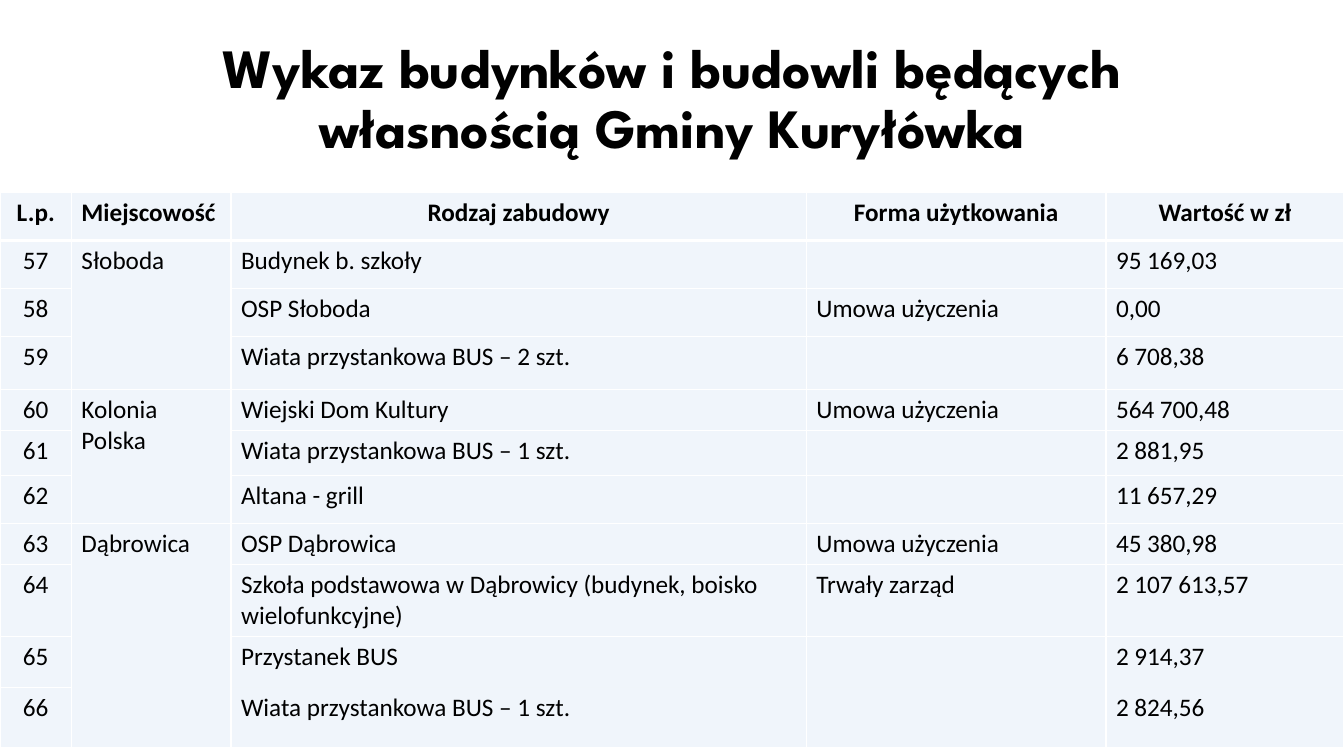
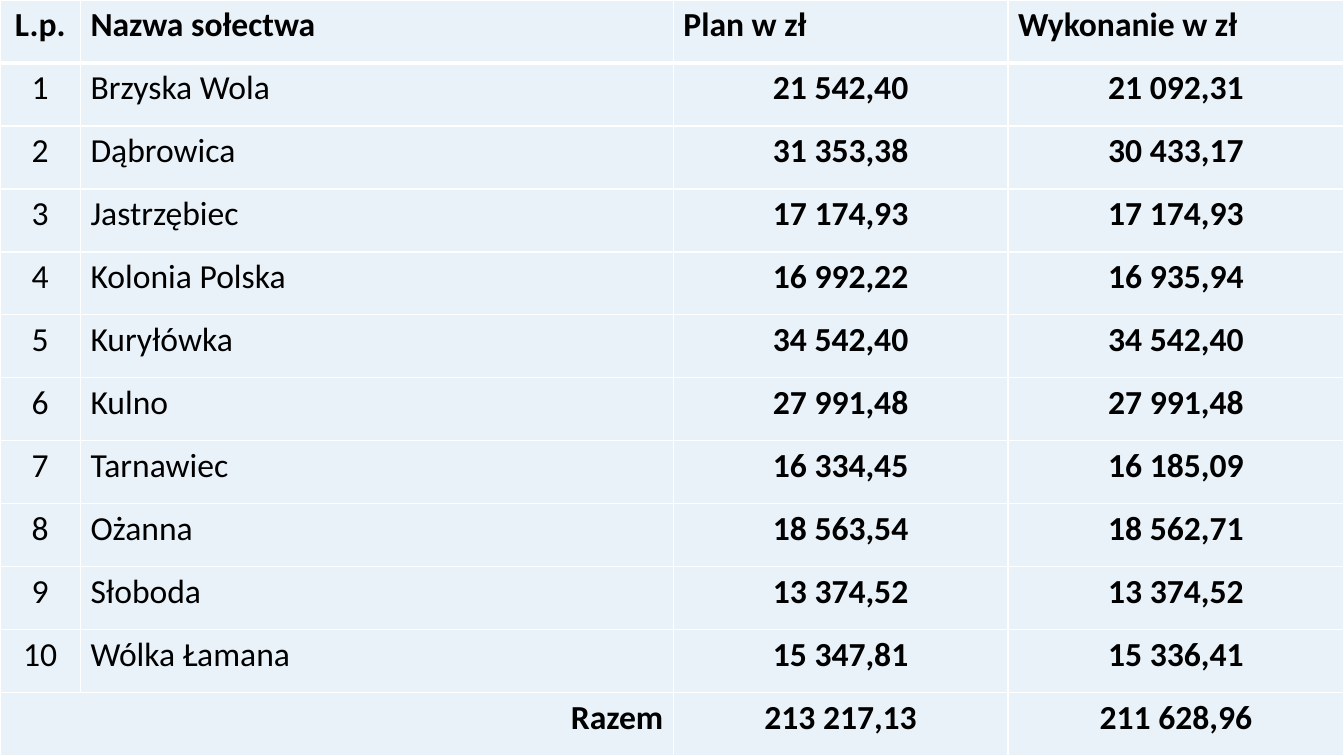
from lxml import etree
from pptx import Presentation
from pptx.dml.color import RGBColor
from pptx.enum import text as t
from pptx.oxml.ns import qn
from pptx.util import Pt

HUE = {"ink": "000000", "tint": "5B9BD5", "rule": "FFFFFF"}
FACE = {"head": "League Spartan", "body": "Calibri"}
SIDE = {"l": t.PP_ALIGN.LEFT, "c": t.PP_ALIGN.CENTER, "r": t.PP_ALIGN.RIGHT}
WIDE, HIGH = 960, 540

TITLE = "Wykaz budynków i budowli będących własnością Gminy Kuryłówka"
LOAN = "Umowa użyczenia"
ASSETS = {
    "top": 137.5,
    "cols": [51, 114, 411, 214, 170],
    "tall": [34.3, 34.3, 34.3, 37.9, 29.3, 32.1, 34.3, 29.3, 51.4, 36.6, 43],
    "size": 18, "alpha": 9,
    "head": "clccc", "body": "cllll", "bold": (),
    "merge": [(1, 1, 3, 1), (4, 1, 6, 1), (7, 1, 10, 1)],
    "open": [(9, 2), (9, 3), (9, 4)],
    "rows": [
        ("L.p.", "Miejscowość", "Rodzaj zabudowy", "Forma użytkowania", "Wartość w zł"),
        ("57", "Słoboda", "Budynek b. szkoły", "", "95 169,03"),
        ("58", "", "OSP Słoboda", LOAN, "0,00"),
        ("59", "", "Wiata przystankowa BUS – 2 szt.", "", "6 708,38"),
        ("60", "Kolonia Polska", "Wiejski Dom Kultury", LOAN, "564 700,48"),
        ("61", "", "Wiata przystankowa BUS – 1 szt.", "", "2 881,95"),
        ("62", "", "Altana - grill", "", "11 657,29"),
        ("63", "Dąbrowica", "OSP Dąbrowica", LOAN, "45 380,98"),
        ("64", "", "Szkoła podstawowa w Dąbrowicy (budynek, boisko wielofunkcyjne)",
         "Trwały zarząd", "2 107 613,57"),
        ("65", "", "Przystanek BUS", "", "2 914,37"),
        ("66", "", "Wiata przystankowa BUS – 1 szt.", "", "2 824,56"),
    ],
}
FUNDS = {
    "top": 0,
    "cols": [57.5, 423.5, 239, 240],
    "tall": [HIGH / 12] * 12,
    "size": 24, "alpha": 13,
    "head": "clll", "body": "clcc", "bold": (2, 3),
    "merge": [(11, 0, 11, 1)],
    "open": [],
    "rows": [
        ("L.p.", "Nazwa sołectwa", "Plan w zł", "Wykonanie w zł"),
        ("1", "Brzyska Wola", "21 542,40", "21 092,31"),
        ("2", "Dąbrowica", "31 353,38", "30 433,17"),
        ("3", "Jastrzębiec", "17 174,93", "17 174,93"),
        ("4", "Kolonia Polska", "16 992,22", "16 935,94"),
        ("5", "Kuryłówka", "34 542,40", "34 542,40"),
        ("6", "Kulno", "27 991,48", "27 991,48"),
        ("7", "Tarnawiec", "16 334,45", "16 185,09"),
        ("8", "Ożanna", "18 563,54", "18 562,71"),
        ("9", "Słoboda", "13 374,52", "13 374,52"),
        ("10", "Wólka Łamana", "15 347,81", "15 336,41"),
        ("Razem", "", "213 217,13", "211 628,96"),
    ],
}


def write(para, words, face, size, bold, side):
    para.alignment = SIDE[side]
    run = para.add_run()
    run.text = words
    font = run.font
    font.name, font.size, font.bold = face, Pt(size), bold
    font.color.rgb = RGBColor.from_string(HUE["ink"])


def tint(cell, alpha):
    cell.fill.solid()
    cell.fill.fore_color.rgb = RGBColor.from_string(HUE["tint"])
    color = cell._tc.tcPr.find(".//" + qn("a:srgbClr"))
    etree.SubElement(color, qn("a:alpha"), val=str(alpha * 1000))


def rule(cell, above, below):
    edges = [("L", 1), ("R", 1), ("T", above), ("B", below)]
    for spot, (edge, width) in enumerate(edges):
        line = etree.Element(qn("a:ln" + edge), w=str(Pt(width)))
        if width:
            fill = etree.SubElement(line, qn("a:solidFill"))
            etree.SubElement(fill, qn("a:srgbClr"), val=HUE["rule"])
        else:
            etree.SubElement(line, qn("a:noFill"))
        cell._tc.tcPr.insert(spot, line)


def add_grid(slide, data):
    rows, cols, tall = data["rows"], data["cols"], data["tall"]
    frame = slide.shapes.add_table(len(rows), len(cols), 0, Pt(data["top"]),
                                   Pt(WIDE), Pt(sum(tall)))
    grid = frame.table
    for col, width in zip(grid.columns, cols):
        col.width = Pt(width)
    for row, height in zip(grid.rows, tall):
        row.height = Pt(height)
    for top, left, end, right in data["merge"]:
        grid.cell(top, left).merge(grid.cell(end, right))
    for r, row in enumerate(rows):
        for c, words in enumerate(row):
            cell = grid.cell(r, c)
            tint(cell, data["alpha"])
            if cell.is_spanned:
                continue
            above = 0 if (r - 1, c) in data["open"] else 3 if r == 1 else 1
            below = 0 if (r, c) in data["open"] else 3 if r == 0 else 1
            rule(cell, above, below)
            para = cell.text_frame.paragraphs[0]
            para.font.size = Pt(data["size"])
            if words:
                total = words == "Razem"
                side = "r" if total else data["body" if r else "head"][c]
                bold = r == 0 or total or c in data["bold"]
                write(para, words, FACE["body"], data["size"], bold, side)


def add_title(slide, words):
    head = slide.shapes.title
    head.left, head.top, head.width, head.height = Pt(66), Pt(20), Pt(828), Pt(104)
    box = head.text_frame
    box.word_wrap = True
    box.auto_size = t.MSO_AUTO_SIZE.NONE
    box.vertical_anchor = t.MSO_ANCHOR.MIDDLE
    para = box.paragraphs[0]
    para.line_spacing = 0.9
    write(para, words, FACE["head"], 39.6, True, "c")


def main():
    deck = Presentation()
    deck.slide_width, deck.slide_height = Pt(WIDE), Pt(HIGH)
    for words, data in [(TITLE, ASSETS), (None, FUNDS)]:
        slide = deck.slides.add_slide(deck.slide_layouts[5 if words else 6])
        if words:
            add_title(slide, words)
        add_grid(slide, data)
    deck.save("out.pptx")


if __name__ == "__main__":
    main()
